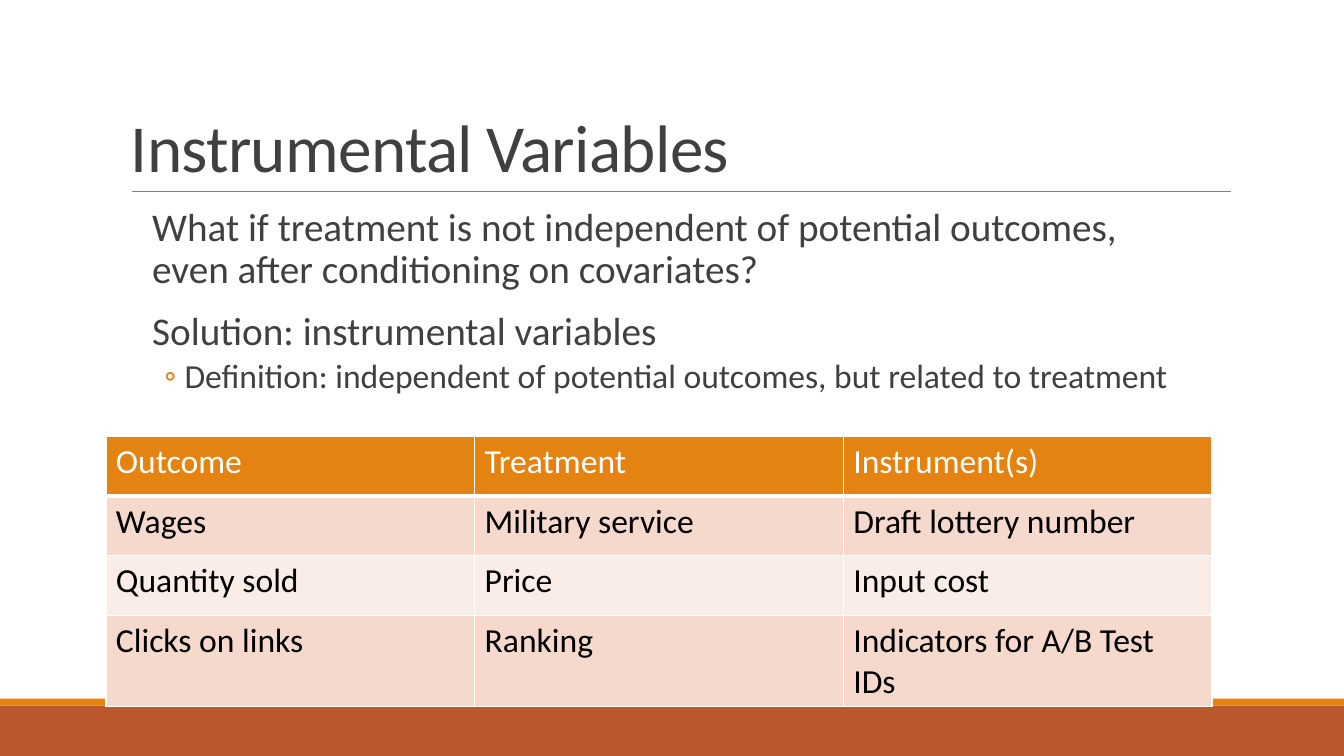
from lxml.etree import SubElement
from pptx import Presentation
from pptx.dml.color import RGBColor
from pptx.enum.shapes import MSO_CONNECTOR, MSO_SHAPE
from pptx.enum.text import MSO_ANCHOR
from pptx.oxml.ns import qn
from pptx.util import Inches, Pt

WIDTH, HEIGHT = Inches(13.33), Inches(7.5)
FONT = "Calibri"
COLORS = {
    "orange": "E48312", "rust": "BD582C", "rule": "808080", "ink": "404040",
    "white": "FFFFFF", "black": "000000", "band": "F5D9CC", "pale": "FAEDE7",
}
QUESTION = {"space_before": Pt(12), "space_after": Pt(2), "line_spacing": 0.9}
DETAIL = {"space_before": Pt(2), "space_after": Pt(4), "line_spacing": 0.9}
# Text, size, spacing, bullet, left margin and hanging indent in inches
BODY = [
    ("What if treatment is not independent of potential outcomes, "
     "even after conditioning on covariates?", 28, QUESTION, " ", 0.1, 0.1),
    ("Solution: instrumental variables", 28, QUESTION, " ", 0.1, 0.1),
    ("Definition: independent of potential outcomes, but related to treatment",
     24, DETAIL, "◦", 0.42, 0.2),
]
EXAMPLES = [
    ("Outcome", "Treatment", "Instrument(s)"),
    ("Wages", "Military service", "Draft lottery number"),
    ("Quantity sold", "Price", "Input cost"),
    ("Clicks on links", "Ranking", "Indicators for A/B Test IDs"),
]


def color(name):
    return RGBColor.from_string(COLORS[name])


def area(left, top, width, height):
    """Turn percentages of the slide into lengths."""
    return [int(share * side / 100) for share, side in
            zip((left, top, width, height), (WIDTH, HEIGHT, WIDTH, HEIGHT))]


def set_values(target, values):
    for name, value in values.items():
        setattr(target, name, value)


def write(para, text, size, tint):
    span = para.add_run()
    span.text = text
    set_values(span.font, {"name": FONT, "size": Pt(size), "bold": False})
    span.font.color.rgb = color(tint)
    return span


def add_band(page, place, tint):
    band = page.shapes.add_shape(MSO_SHAPE.RECTANGLE, *area(*place))
    band.shadow.inherit = False
    band.fill.solid()
    band.fill.fore_color.rgb = color(tint)
    band.line.fill.background()


def add_rule(page, start, end, level):
    left, top, right, bottom = area(start, level, end, level)
    rule = page.shapes.add_connector(
        MSO_CONNECTOR.STRAIGHT, left, top, right, bottom)
    rule.line.color.rgb = color("rule")
    rule.line.width = Pt(0.5)
    SubElement(rule._element.spPr, qn("a:effectLst"))


def add_frame(page, place, values):
    frame = page.shapes.add_textbox(*area(*place)).text_frame
    set_values(frame, {"word_wrap": True, **values})
    return frame


def add_title(page, text):
    frame = add_frame(page, (9, 4.13, 82.52, 21.2),
                      {"vertical_anchor": MSO_ANCHOR.BOTTOM})
    para = frame.paragraphs[0]
    para.line_spacing = 0.85
    span = write(para, text, 48, "ink")
    span.font._element.set("spc", "-50")


def add_bullet(para, mark, margin, hang):
    props = para._p.get_or_add_pPr()
    props.set("marL", str(Inches(margin)))
    props.set("indent", str(-Inches(hang)))
    tint = SubElement(props, qn("a:buClr"))
    SubElement(tint, qn("a:srgbClr"), val=COLORS["orange"])
    SubElement(props, qn("a:buFont"), typeface=FONT)
    SubElement(props, qn("a:buChar"), char=mark)


def add_body(page):
    frame = add_frame(page, (10.58, 26.8, 78.7, 46.67),
                      {"margin_left": 0, "margin_right": 0})
    for index, (text, size, spacing, mark, margin, hang) in enumerate(BODY):
        para = frame.add_paragraph() if index else frame.paragraphs[0]
        set_values(para, spacing)
        add_bullet(para, mark, margin, hang)
        write(para, text, size, "ink")


def add_borders(cell, widths):
    props = cell._tc.get_or_add_tcPr()
    for side, width in widths.items():
        border = SubElement(props, qn(f"a:{side}"), w=str(Pt(width)))
        fill = SubElement(border, qn("a:solidFill"))
        SubElement(fill, qn("a:srgbClr"), val=COLORS["white"])


def add_examples(page):
    place = area(7.88, 57.73, 82.3, 31.6)
    table = page.shapes.add_table(
        len(EXAMPLES), len(EXAMPLES[0]), *place).table
    set_values(table, {"first_row": False, "horz_banding": False})
    for row, texts in enumerate(EXAMPLES):
        fill = "orange" if row == 0 else ("pale", "band")[row % 2]
        for column, text in enumerate(texts):
            cell = table.cell(row, column)
            add_borders(cell, {"lnL": 1, "lnR": 1,
                               "lnT": 3 if row == 1 else 1,
                               "lnB": 3 if row == 0 else 1})
            cell.fill.solid()
            cell.fill.fore_color.rgb = color(fill)
            write(cell.text_frame.paragraphs[0], text, 24,
                  "black" if row else "white")


def main():
    deck = Presentation()
    set_values(deck, {"slide_width": WIDTH, "slide_height": HEIGHT})
    page = deck.slides.add_slide(deck.slide_layouts[6])
    # Footer bands and title rule
    add_band(page, (0, 93.33, 100, 6.67), "rust")
    add_band(page, (0, 92.4, 100, 0.93), "orange")
    add_rule(page, 9.83, 91.6, 25.33)
    # Content
    add_title(page, "Instrumental Variables")
    add_body(page)
    add_examples(page)
    deck.save("out.pptx")


if __name__ == "__main__":
    main()
